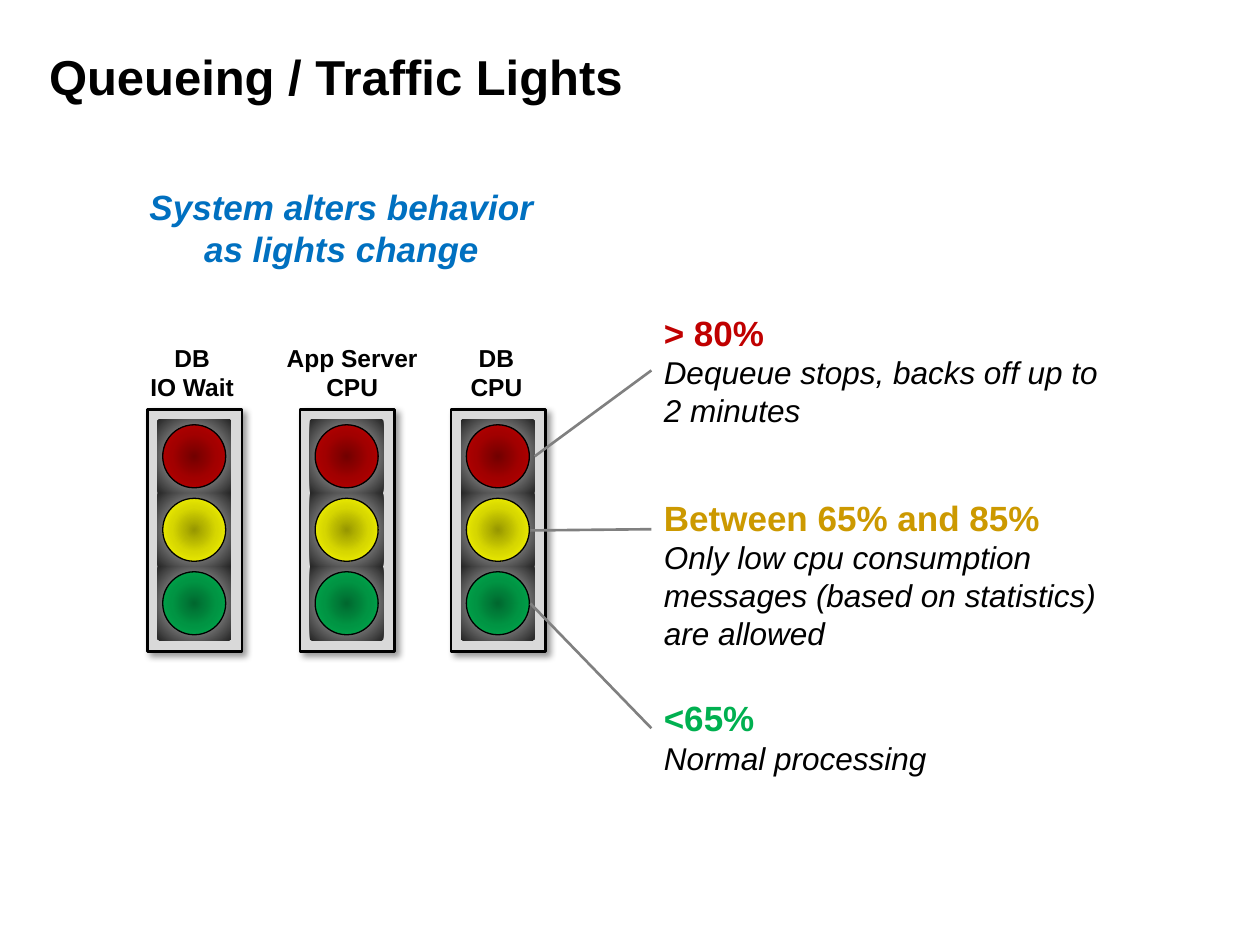
from lxml import etree
from pptx import Presentation
from pptx.dml.color import RGBColor
from pptx.enum.shapes import MSO_CONNECTOR, MSO_SHAPE
from pptx.enum.text import MSO_ANCHOR, MSO_AUTO_SIZE, PP_ALIGN
from pptx.oxml import parse_xml
from pptx.oxml.ns import nsdecls, qn
from pptx.util import Inches, Pt

COLORS = {
    "black": "000000", "blue": "0070C0", "gray": "808080", "housing": "D9D9D9",
    "red": "C00000", "amber": "CC9900", "green": "00B050",
}
PANEL_GRADIENT = ("A6A6A6", "808080", "262626")
LAMP_GRADIENTS = (
    ("720000", "A20000", "C00000"),
    ("979700", "D7D700", "FFFF00"),
    ("00682F", "009443", "00B050"),
)
PANEL_SIZE = 7 / 12
LAMP_SIZE = 0.5
LIGHTS_TOP = 3.25
MARGIN = 0.08
LIGHTS = (
    (1.17, "DB\nIO Wait", 1.09, 0.87),
    (2.38, "App Server\nCPU", 2.17, 1.25),
    (3.58, "DB\nCPU", 3.63, 0.62),
)
LEVELS = (
    ("> 80%", "Dequeue stops, backs off up to 2 minutes", "red",
     (5.17, 2.42, 3.83, 1.04), True, (4.25, 3.62), 2.94),
    ("Between 65% and 85%",
     "Only low cpu consumption messages (based on statistics) are allowed", "amber",
     (5.17, 3.89, 3.92, 0.61), False, (4.21, 4.21), 4.2),
    ("<65%", "Normal processing", "green",
     (5.17, 5.48, 4.08, 0.61), False, (4.21, 4.79), 5.78),
)


def rgb(name):
    """Return the named colour."""
    return RGBColor.from_string(COLORS[name])


def add_text(slide, box, lines, align=PP_ALIGN.LEFT, grow=False, wrap=True):
    """Add a text box of (text, size, colour, bold, italic) paragraphs."""
    shape = slide.shapes.add_textbox(*map(Inches, box))
    frame = shape.text_frame
    frame.word_wrap = wrap
    frame.auto_size = MSO_AUTO_SIZE.SHAPE_TO_FIT_TEXT if grow else MSO_AUTO_SIZE.NONE
    for index, (text, size, color, bold, italic) in enumerate(lines):
        paragraph = frame.add_paragraph() if index else frame.paragraphs[0]
        paragraph.text = text
        paragraph.alignment = align
        font = paragraph.font
        font.name, font.size = "Arial", Pt(size)
        font.bold, font.italic = bold, italic
        font.color.rgb = rgb(color)
    return frame


def add_figure(slide, kind, box, line_width=None):
    """Add a flat shape with a black outline or none."""
    shape = slide.shapes.add_shape(kind, *map(Inches, box))
    if line_width:
        shape.line.color.rgb = rgb("black")
        shape.line.width = Pt(line_width)
    else:
        shape.line.fill.background()
    shape.shadow.inherit = False
    return shape


def fill_radial(shape, stops):
    """Fill a shape with a gradient running from its centre outward."""
    shape.fill.background()
    properties = shape._element.spPr
    stop_xml = "".join(
        f'<a:gs pos="{index * 50000}"><a:srgbClr val="{color}"/></a:gs>'
        for index, color in enumerate(stops)
    )
    gradient = parse_xml(
        f'<a:gradFill {nsdecls("a")} rotWithShape="1"><a:gsLst>{stop_xml}</a:gsLst>'
        '<a:path path="circle"><a:fillToRect l="50000" t="50000" r="50000" b="50000"/>'
        "</a:path></a:gradFill>"
    )
    properties.replace(properties.find(qn("a:noFill")), gradient)


def add_shadow(shape):
    """Give a shape a soft shadow to the lower right."""
    shape._element.spPr.find(qn("a:effectLst")).append(parse_xml(
        f'<a:outerShdw {nsdecls("a")} blurRad="{Pt(4)}" dist="{Pt(3)}" dir="2700000" '
        'algn="tl" rotWithShape="0"><a:srgbClr val="000000"><a:alpha val="40000"/>'
        "</a:srgbClr></a:outerShdw>"
    ))


def add_traffic_light(slide, left):
    """Add a housing with three lamps and return its panels."""
    housing = add_figure(slide, MSO_SHAPE.RECTANGLE, (left, LIGHTS_TOP, 0.75, 1.92), 1.5)
    housing.fill.solid()
    housing.fill.fore_color.rgb = rgb("housing")
    add_shadow(housing)
    tops = [LIGHTS_TOP + MARGIN + row * PANEL_SIZE for row in range(3)]
    panels = []
    for top in tops:
        panel = add_figure(slide, MSO_SHAPE.RECTANGLE,
                           (left + MARGIN, top, PANEL_SIZE, PANEL_SIZE))
        fill_radial(panel, PANEL_GRADIENT)
        panels.append(panel)
    inset = (PANEL_SIZE - LAMP_SIZE) / 2
    for top, stops in zip(tops, LAMP_GRADIENTS):
        lamp = add_figure(slide, MSO_SHAPE.OVAL,
                          (left + MARGIN + inset, top + inset, LAMP_SIZE, LAMP_SIZE), 0.75)
        fill_radial(lamp, stops)
    return panels


def add_leader(slide, start, end):
    """Add a thin gray line from a lamp to its explanation."""
    line = slide.shapes.add_connector(MSO_CONNECTOR.STRAIGHT, *map(Inches, start + end))
    line.line.color.rgb = rgb("gray")
    line.line.width = Pt(1.5)
    etree.SubElement(line._element.spPr, qn("a:effectLst"))
    return line


def main():
    """Build the slide and save it."""
    presentation = Presentation()
    presentation.slide_width, presentation.slide_height = Inches(10), Inches(7.5)
    slide = presentation.slides.add_slide(presentation.slide_layouts[6])

    title = add_text(slide, (0.33, 0, 9, 1.2),
                     [("Queueing / Traffic Lights", 28, "black", True, False)])
    title.vertical_anchor = MSO_ANCHOR.MIDDLE
    title.margin_left = title.margin_top = title.margin_bottom = Inches(0.06)

    for left, label, label_left, label_width in LIGHTS:
        panels = add_traffic_light(slide, left)
        add_text(slide, (label_left, 2.67, label_width, 0.57),
                 [(label, 14, "black", True, False)], PP_ALIGN.CENTER, grow=True, wrap=False)

    add_text(slide, (1, 1.42, 3.42, 0.77),
             [("System alters behavior as lights change", 20, "blue", True, True)],
             PP_ALIGN.CENTER, grow=True)

    leaders = []
    for heading, detail, color, box, grow, start, end_top in LEVELS:
        leaders.append(add_leader(slide, start, (box[0], end_top)))
        add_text(slide, box, [(heading, 20, color, True, False),
                              (detail, 18, "black", False, True)], grow=grow)
    leaders[0].begin_connect(panels[0], 3)

    presentation.save("out.pptx")


if __name__ == "__main__":
    main()
